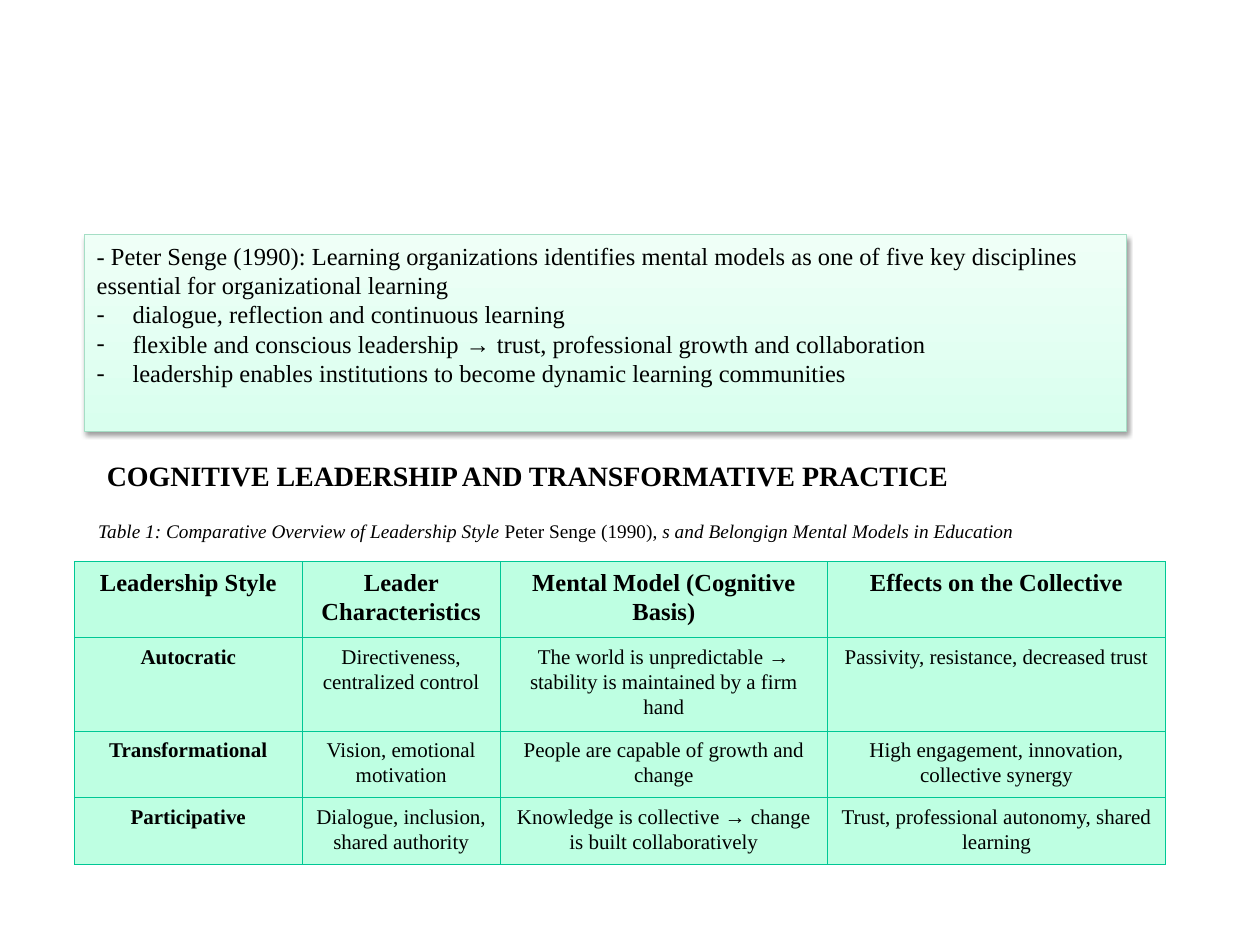
from lxml.etree import SubElement
from pptx import Presentation
from pptx.dml.color import RGBColor
from pptx.enum.shapes import MSO_SHAPE
from pptx.enum.text import MSO_ANCHOR, PP_ALIGN
from pptx.oxml import parse_xml
from pptx.oxml.ns import nsdecls, qn
from pptx.util import Pt

COLORS = {
    "text": "000000",
    "panel_low": "D9FFEE",
    "panel_high": "EFFFF7",
    "panel_line": "A5DEC5",
    "cell": "BEFFE2",
    "border": "00C795",
}
FONT = "Times New Roman"
PANEL_FORMAT = {"size": Pt(14)}
HEADING_FORMAT = {"size": Pt(16), "bold": True}
CAPTION_FORMAT = {"size": Pt(11)}

PANEL_LEAD = ("- Peter Senge (1990): Learning organizations identifies mental models as one "
              "of five key disciplines essential for organizational learning")
PANEL_POINTS = [
    ["dialogue, reflection and continuous learning"],
    ["flexible and conscious leadership ", "→ ",
     "trust, professional growth and collaboration"],
    ["leadership enables institutions to become dynamic learning communities"],
]
HEADING = "COGNITIVE LEADERSHIP AND TRANSFORMATIVE PRACTICE"
CAPTION = [
    ("Table 1: Comparative Overview of Leadership Style", True),
    (" Peter Senge (1990), ", False),
    ("s and Belongign Mental Models in Education", True),
]
COLUMN_WIDTHS = [130.3, 113, 187.2, 193]
ROW_HEIGHTS = [43.5, 53, 38, 38]
STYLES_TABLE = [
    ["Leadership Style", "Leader Characteristics",
     "Mental Model (Cognitive Basis)", "Effects on the Collective"],
    ["Autocratic", "Directiveness, centralized control",
     "The world is unpredictable → stability is maintained by a firm hand",
     "Passivity, resistance, decreased trust"],
    ["Transformational", "Vision, emotional motivation",
     "People are capable of growth and change",
     "High engagement, innovation, collective synergy"],
    ["Participative", "Dialogue, inclusion, shared authority",
     "Knowledge is collective → change is built collaboratively",
     "Trust, professional autonomy, shared learning"],
]


def rgb(name):
    return RGBColor.from_string(COLORS[name])


def add_span(para, text, **formats):
    span = para.add_run()
    span.text = text
    span.font.color.rgb = rgb("text")
    for name, value in {"name": FONT, **formats}.items():
        setattr(span.font, name, value)
    return span


def add_shadow(effects, blur, distance, angle, opacity):
    shadow = SubElement(effects, qn("a:outerShdw"), blurRad=str(Pt(blur)),
                        dist=str(Pt(distance)), dir=str(angle * 60000),
                        algn="tl", rotWithShape="0")
    color = SubElement(shadow, qn("a:srgbClr"), val=COLORS["text"])
    SubElement(color, qn("a:alpha"), val=str(opacity * 1000))


def add_dash(para, hang):
    properties = para._p.get_or_add_pPr()
    properties.set("marL", str(Pt(hang)))
    properties.set("indent", str(-Pt(hang)))
    color = SubElement(properties, qn("a:buClr"))
    SubElement(color, qn("a:srgbClr"), val=COLORS["text"])
    SubElement(properties, qn("a:buFont"), typeface=FONT)
    SubElement(properties, qn("a:buChar"), char="-")


def add_panel(page, left, top, width, height):
    box = page.shapes.add_shape(MSO_SHAPE.RECTANGLE, Pt(left), Pt(top), Pt(width), Pt(height))
    box.fill.gradient()
    box.fill.gradient_angle = 90
    for stop, name, position in zip(box.fill.gradient_stops,
                                    ("panel_low", "panel_high"), (0, 1)):
        stop.color.rgb = rgb(name)
        stop.position = position
    box.line.color.rgb = rgb("panel_line")
    box.line.width = Pt(0.75)
    box.shadow.inherit = False
    add_shadow(box._element.spPr.find(qn("a:effectLst")), 3.1, 1.6, 90, 38)

    frame = box.text_frame
    frame.word_wrap = True
    frame.vertical_anchor = MSO_ANCHOR.TOP
    lead = frame.paragraphs[0]
    lead.alignment = PP_ALIGN.LEFT
    add_span(lead, PANEL_LEAD, **PANEL_FORMAT)
    for pieces in PANEL_POINTS:
        para = frame.add_paragraph()
        para.alignment = PP_ALIGN.LEFT
        add_dash(para, 20.5)
        for piece in pieces:
            font = "Arial" if piece.startswith("→") else FONT
            add_span(para, piece, name=font, **PANEL_FORMAT)


def add_heading(page, left, top, width, height):
    box = page.shapes.add_textbox(Pt(left), Pt(top), Pt(width), Pt(height))
    box.text_frame.word_wrap = True
    span = add_span(box.text_frame.paragraphs[0], HEADING, **HEADING_FORMAT)
    # Text effects belong right after the text fill
    effects = parse_xml(f"<a:effectLst {nsdecls('a')}/>")
    span.font._element.find(qn("a:solidFill")).addnext(effects)
    add_shadow(effects, 3, 3, 45, 43)


def add_caption(page, left, top, width, height):
    box = page.shapes.add_textbox(Pt(left), Pt(top), Pt(width), Pt(height))
    box.text_frame.word_wrap = False
    box.text_frame.vertical_anchor = MSO_ANCHOR.MIDDLE
    para = box.text_frame.paragraphs[0]
    para.alignment = PP_ALIGN.JUSTIFY
    for text, italic in CAPTION:
        add_span(para, text, italic=italic, **CAPTION_FORMAT)


def style_cell(cell):
    cell.margin_left = cell.margin_right = Pt(5)
    cell.margin_top = cell.margin_bottom = Pt(3.6)
    properties = cell._tc.get_or_add_tcPr()
    for side in ("lnL", "lnR", "lnT", "lnB"):
        line = SubElement(properties, qn(f"a:{side}"), w=str(Pt(0.75)))
        fill = SubElement(line, qn("a:solidFill"))
        SubElement(fill, qn("a:srgbClr"), val=COLORS["border"])
    cell.fill.solid()
    cell.fill.fore_color.rgb = rgb("cell")


def add_styles_table(page, left, top):
    table = page.shapes.add_table(
        len(ROW_HEIGHTS), len(COLUMN_WIDTHS), Pt(left), Pt(top),
        Pt(sum(COLUMN_WIDTHS)), Pt(sum(ROW_HEIGHTS))).table
    for column, width in zip(table.columns, COLUMN_WIDTHS):
        column.width = Pt(width)
    for row, height in zip(table.rows, ROW_HEIGHTS):
        row.height = Pt(height)
    for row_index, texts in enumerate(STYLES_TABLE):
        for column_index, text in enumerate(texts):
            cell = table.cell(row_index, column_index)
            style_cell(cell)
            para = cell.text_frame.paragraphs[0]
            para.alignment = PP_ALIGN.CENTER
            para.line_spacing = 1.07
            add_span(para, text, size=Pt(12 if row_index else 14),
                     bold=row_index == 0 or column_index == 0)


def main():
    deck = Presentation()
    deck.slide_width, deck.slide_height = Pt(720), Pt(540)
    page = deck.slides.add_slide(deck.slide_layouts[6])
    add_panel(page, 48.2, 133.9, 595.5, 112.5)
    add_heading(page, 54, 258.5, 544.3, 47.5)
    add_styles_table(page, 42.5, 321)
    add_caption(page, 49, 293, 538.6, 20.2)
    deck.save("out.pptx")


if __name__ == "__main__":
    main()
